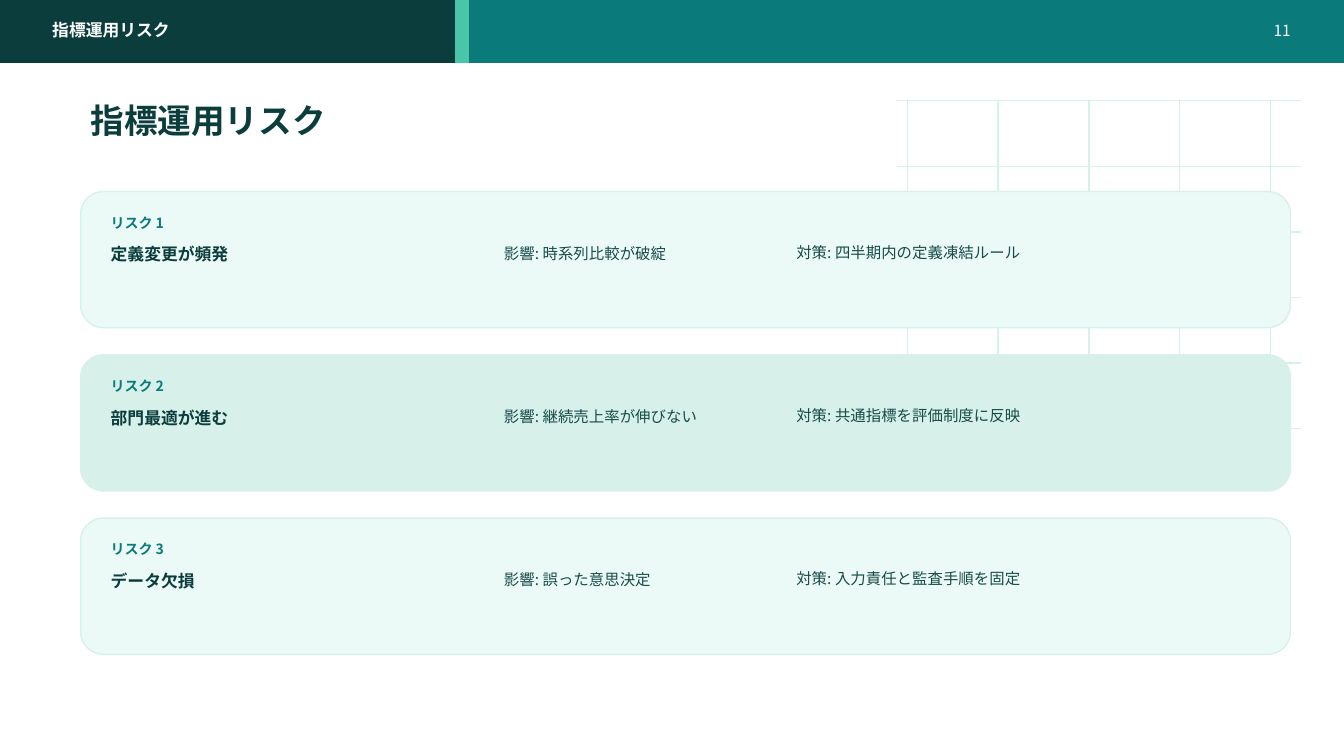
"""Build the slide on risks in running performance indicators."""
from dataclasses import dataclass

from lxml import etree
from pptx import Presentation
from pptx import util as u
from pptx.dml.color import RGBColor
from pptx.enum import lang, shapes, text
from pptx.oxml.ns import qn

PX = u.Inches(0.01)


@dataclass(frozen=True)
class Theme:
    """Colours, fonts and type sizes of the slide."""
    dark: str = "0B3D3D"
    teal: str = "0A7A7A"
    accent: str = "49C5A9"
    mint: str = "D7F1EA"
    pale: str = "ECFAF7"
    body: str = "174B48"
    white: str = "FFFFFF"
    font: str = "Noto Sans CJK JP"
    title_font: str = "Lato"
    title_size: int = 24
    heading_size: int = 12
    body_size: int = 11
    tag_size: int = 10
    line_width: int = 1


THEME = Theme()
RISKS = [
    ("定義変更が頻発", "時系列比較が破綻", "四半期内の定義凍結ルール"),
    ("部門最適が進む", "継続売上率が伸びない", "共通指標を評価制度に反映"),
    ("データ欠損", "誤った意思決定", "入力責任と監査手順を固定"),
]


def emu(*lengths):
    """Turn px lengths into EMU."""
    return [length * PX for length in lengths]


def add_line(slide, *ends):
    """Draw one thin line of the background grid."""
    line = slide.shapes.add_connector(shapes.MSO_CONNECTOR.STRAIGHT, *emu(*ends))
    line.line.color.rgb = RGBColor.from_string(THEME.mint)
    line.line.width = u.Pt(THEME.line_width)
    etree.SubElement(line._element.spPr, qn("a:effectLst"))


def add_block(slide, box, fill, outline=None, kind=shapes.MSO_SHAPE.RECTANGLE):
    """Draw a filled shape, outlined in its own colour by default."""
    block = slide.shapes.add_shape(kind, *emu(*box))
    block.shadow.inherit = False
    block.fill.solid()
    block.fill.fore_color.rgb = RGBColor.from_string(fill)
    block.line.color.rgb = RGBColor.from_string(outline or fill)
    block.line.width = u.Pt(THEME.line_width)


def add_text(slide, box, words, size, color, bold=False, font=THEME.font,
             align=text.PP_ALIGN.LEFT, anchor=text.MSO_ANCHOR.MIDDLE):
    """Place a wrapped one-paragraph text box."""
    frame = slide.shapes.add_textbox(*emu(*box)).text_frame
    frame.word_wrap = True
    frame.vertical_anchor = anchor
    frame.text = words
    paragraph = frame.paragraphs[0]
    paragraph.alignment = align
    run = paragraph.runs[0]
    run.font.size = u.Pt(size)
    run.font.bold = bold
    run.font.color.rgb = RGBColor.from_string(color)
    run.font.name = font
    run.font.language_id = lang.MSO_LANGUAGE_ID.JAPANESE
    east_asian = etree.SubElement(run.font._element, qn("a:ea"))
    east_asian.set("typeface", font)


def add_grid(slide):
    """Draw the decorative grid at the upper right."""
    for row in range(6):
        y = 100 + 65 * row
        add_line(slide, 890, y, 1290, y)
    for column in range(5):
        x = 900 + 90 * column
        add_line(slide, x, 100, x, 420)


def add_header(slide, heading, number):
    """Draw the top band with its heading and page number."""
    add_block(slide, (0, 0, 1333, 62), THEME.teal)
    add_block(slide, (0, 0, 460, 62), THEME.dark)
    add_block(slide, (452, 0, 12, 62), THEME.accent)
    add_text(slide, (42, 17, 880, 26), heading, THEME.heading_size, THEME.white, bold=True)
    add_text(slide, (1215, 17, 75, 26), number, THEME.body_size, THEME.white,
             align=text.PP_ALIGN.RIGHT)


def add_risk(slide, index, name, impact, measure):
    """Draw one risk card with its name, impact and measure."""
    top = 190 + 162 * index
    fill = THEME.mint if index % 2 else THEME.pale
    add_block(slide, (80, top, 1200, 135), fill, THEME.mint,
              shapes.MSO_SHAPE.ROUNDED_RECTANGLE)
    add_text(slide, (100, top + 20, 120, 22), f"リスク {index + 1}",
             THEME.tag_size, THEME.teal, bold=True)
    add_text(slide, (100, top + 46, 370, 32), name, THEME.heading_size, THEME.dark, bold=True)
    add_text(slide, (490, top + 46, 280, 30), f"影響: {impact}", THEME.body_size, THEME.body)
    add_text(slide, (780, top + 46, 480, 58), f"対策: {measure}", THEME.body_size, THEME.body,
             anchor=text.MSO_ANCHOR.TOP)


def main():
    """Assemble and save the slide."""
    presentation = Presentation()
    presentation.slide_width, presentation.slide_height = emu(1333, 750)
    slide = presentation.slides.add_slide(presentation.slide_layouts[6])
    heading = "指標運用リスク"
    add_grid(slide)
    add_header(slide, heading, "11")
    add_text(slide, (80, 95, 1140, 48), heading, THEME.title_size, THEME.dark,
             bold=True, font=THEME.title_font)
    for index, risk in enumerate(RISKS):
        add_risk(slide, index, *risk)
    presentation.save("out.pptx")


if __name__ == "__main__":
    main()
